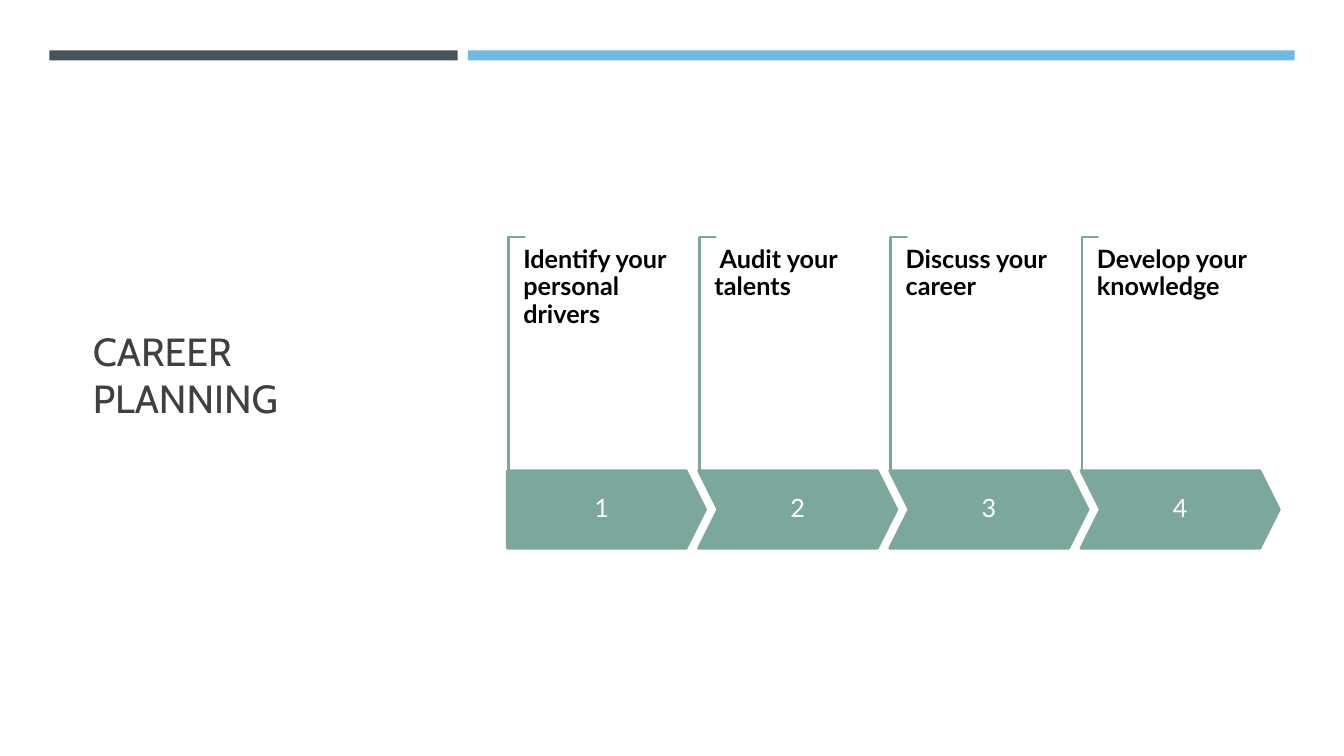
import pptx
import pptx.util
import pptx.dml.color
import pptx.enum.shapes
import pptx.enum.text

Inches = pptx.util.Inches
Shape = pptx.enum.shapes.MSO_SHAPE
Align = pptx.enum.text.PP_ALIGN
Anchor = pptx.enum.text.MSO_ANCHOR

TITLE = "CAREER PLANNING"
STEPS = ["Identify your personal drivers", " Audit your talents",
         "Discuss your career", "Develop your knowledge"]
TITLE_BOX = (0.82, 1.14, 3.34, 5.15)
BARS = [((0.49, 0.5, 4.05, 0.1), "465359"), ((4.64, 0.5, 8.2, 0.1), "71B9E4")]
SAGE, WHITE, BLACK, GREY = "7BA79D", "FFFFFF", "000000", "404040"

FIRST_LEFT, LAST_LEFT = 5.03, 10.72
STEP_PITCH = (LAST_LEFT - FIRST_LEFT) / (len(STEPS) - 1)
ARROW_TOP, ARROW_WIDTH, ARROW_HEIGHT = 4.67, 1.97, 0.77
BRACKET_LENGTH, BRACKET_DEPTH = 2.32, 0.16
LABEL_TOP, LABEL_WIDTH, LABEL_HEIGHT = 2.45, 1.6, 1.85


def rgb(value):
    return pptx.dml.color.RGBColor.from_string(value)


def write(shape, text, size=18, font="Lato", color=BLACK, bold=False,
          align=Align.LEFT, anchor=Anchor.TOP, insets=(0, 0), spacing=0.9):
    """Fill a shape with one formatted paragraph; insets are (sides, top and bottom)."""
    frame = shape.text_frame
    frame.word_wrap = True
    frame.auto_size = pptx.enum.text.MSO_AUTO_SIZE.NONE
    frame.vertical_anchor = anchor
    frame.margin_left = frame.margin_right = Inches(insets[0])
    frame.margin_top = frame.margin_bottom = Inches(insets[1])
    para = frame.paragraphs[0]
    para.alignment, para.line_spacing = align, spacing
    span = para.add_run()
    span.text = text
    span.font.name, span.font.size, span.font.bold = font, pptx.util.Pt(size), bold
    span.font.color.rgb = rgb(color)


def add_shape(shapes, kind, box, fill, line=None, adjustments=()):
    shape = shapes.add_shape(kind, *map(Inches, box))
    shape.shadow.inherit = False
    shape.fill.solid()
    shape.fill.fore_color.rgb = rgb(fill)
    if line:
        shape.line.color.rgb = rgb(line)
        shape.line.width = pptx.util.Pt(1.75)
    else:
        shape.line.fill.background()
    for index, value in enumerate(adjustments):
        shape.adjustments[index] = value
    return shape


def add_step(shapes, index, label):
    left = FIRST_LEFT + index * STEP_PITCH
    # The bracket is a corner turned upright about its centre, standing on the arrow.
    center_x = left + 0.01 + BRACKET_DEPTH / 2
    center_y = ARROW_TOP - BRACKET_LENGTH / 2
    bracket = add_shape(shapes, Shape.CORNER,
                        (center_x - BRACKET_LENGTH / 2, center_y - BRACKET_DEPTH / 2,
                         BRACKET_LENGTH, BRACKET_DEPTH), WHITE, SAGE, (0.01, 0.01))
    bracket.rotation = 90
    arrow = add_shape(shapes, Shape.CHEVRON if index else Shape.PENTAGON,
                      (left, ARROW_TOP, ARROW_WIDTH, ARROW_HEIGHT), SAGE, SAGE, (0.25,))
    write(arrow, str(index + 1), color=WHITE, align=Align.CENTER,
          anchor=Anchor.MIDDLE, insets=(0.12, 0.25))
    label_box = shapes.add_textbox(*map(Inches, (left + BRACKET_DEPTH, LABEL_TOP,
                                                 LABEL_WIDTH, LABEL_HEIGHT)))
    write(label_box, label, bold=True)


def main():
    deck = pptx.Presentation()
    deck.slide_width, deck.slide_height = Inches(13.33), Inches(7.5)
    page = deck.slides.add_slide(deck.slide_layouts[5])
    page.background.fill.solid()
    page.background.fill.fore_color.rgb = rgb(WHITE)

    title = page.shapes.title
    title.left, title.top, title.width, title.height = map(Inches, TITLE_BOX)
    write(title, TITLE, size=28, font="Cabin", color=GREY, anchor=Anchor.MIDDLE,
          insets=(0.1, 0.05), spacing=1.0)

    for box, color in BARS:
        add_shape(page.shapes, Shape.RECTANGLE, box, color)
    process = page.shapes.add_group_shape()
    for index, label in enumerate(STEPS):
        add_step(process.shapes, index, label)
    deck.save("out.pptx")


if __name__ == "__main__":
    main()
